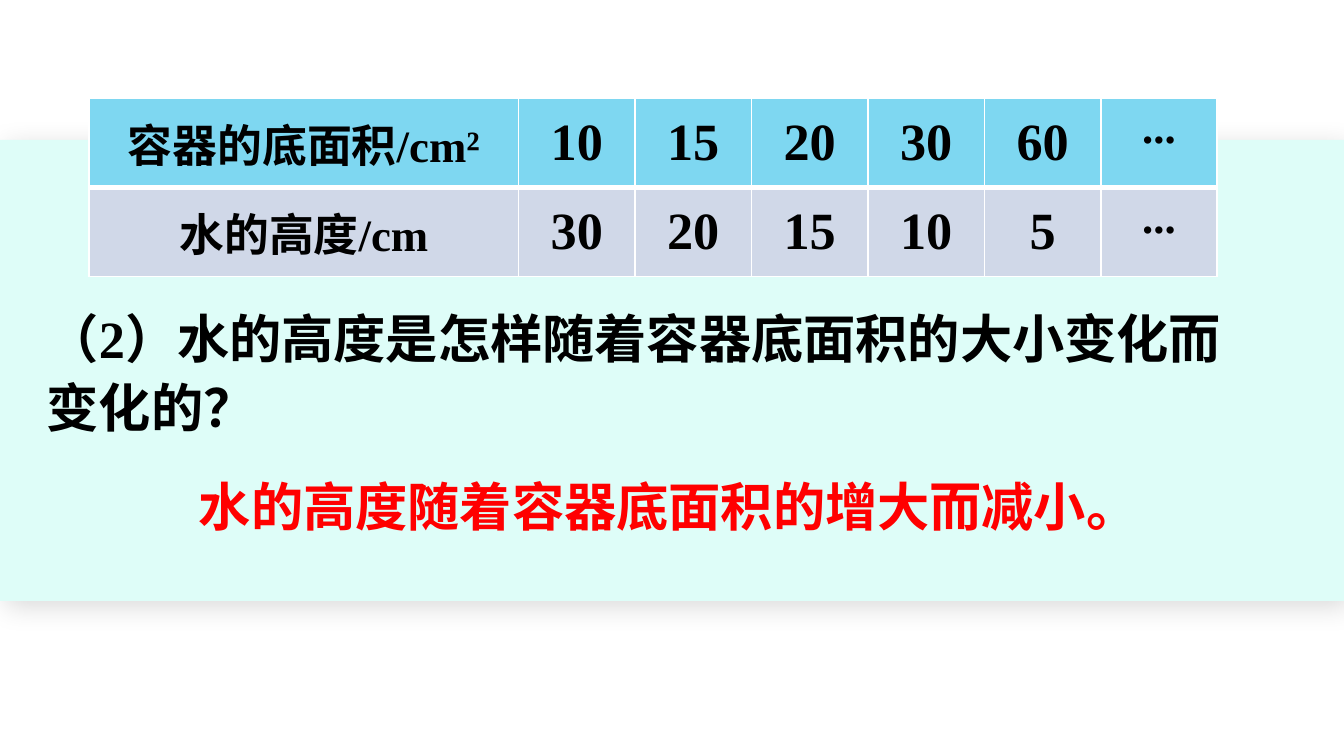
import pptx
import pptx.dml.color
import pptx.enum.shapes
import pptx.enum.text
import pptx.oxml
import pptx.oxml.ns
import pptx.util
from lxml import etree

Pt = pptx.util.Pt
RGBColor = pptx.dml.color.RGBColor
MIDDLE = pptx.enum.text.MSO_ANCHOR.MIDDLE
TOP = pptx.enum.text.MSO_ANCHOR.TOP
CENTER = pptx.enum.text.PP_ALIGN.CENTER
qn = pptx.oxml.ns.qn

BLACK = RGBColor(0, 0, 0)
WHITE = RGBColor(0xFF, 0xFF, 0xFF)
RED = RGBColor(0xFF, 0, 0)
MINT = RGBColor(0xDE, 0xFD, 0xF8)
SKY = RGBColor(0x7E, 0xD7, 0xF1)
LAVENDER = RGBColor(0xD0, 0xD8, 0xE8)

LATIN = "Times New Roman"
CHINESE = "Noto Sans CJK SC"

ROWS = [
    (("容器的底面积", "/cm²"), ["10", "15", "20", "30", "60", "..."], SKY),
    (("水的高度", "/cm"), ["30", "20", "15", "10", "5", "..."], LAVENDER),
]


class Lesson:
    def __init__(self, slide):
        self.slide = slide

    def style_run(self, run, size, latin=LATIN, color=BLACK):
        font = run.font
        font.size, font.bold, font.name = Pt(size), True, latin
        font.color.rgb = color
        east_asian = etree.SubElement(font._element, qn("a:ea"))
        east_asian.set("typeface", CHINESE)

    def band(self, left, top, width, height):
        """Draw the full-width background band with its soft shadow."""
        band = self.slide.shapes.add_shape(
            pptx.enum.shapes.MSO_SHAPE.RECTANGLE,
            Pt(left), Pt(top), Pt(width), Pt(height))
        band.fill.solid()
        band.fill.fore_color.rgb = MINT
        band.line.fill.background()
        band.shadow.inherit = False
        effects = band._element.spPr.find(qn("a:effectLst"))
        effects.append(pptx.oxml.parse_xml(
            f'<a:outerShdw {pptx.oxml.ns.nsdecls("a")} blurRad="{Pt(15)}" '
            f'dist="{Pt(5)}" dir="2700000" algn="tl" rotWithShape="0">'
            '<a:srgbClr val="000000"><a:alpha val="15000"/></a:srgbClr>'
            '</a:outerShdw>'))

    def text(self, words, left, top, width, height, latin, color=BLACK,
             anchor=TOP, spacing=1.0):
        frame = self.slide.shapes.add_textbox(
            Pt(left), Pt(top), Pt(width), Pt(height)).text_frame
        frame.word_wrap = True
        frame.auto_size = pptx.enum.text.MSO_AUTO_SIZE.SHAPE_TO_FIT_TEXT
        frame.vertical_anchor = anchor
        frame.text = words
        paragraph = frame.paragraphs[0]
        paragraph.line_spacing = spacing
        self.style_run(paragraph.runs[0], 28, latin, color)

    def cell(self, cell, pieces, fill, borders, anchor=MIDDLE):
        """Fill a cell with (words, size, latin font) pieces."""
        cell.vertical_anchor = anchor
        cell.margin_left = cell.margin_right = Pt(5.04)
        cell.margin_top = cell.margin_bottom = Pt(2.88)
        properties = cell._tc.get_or_add_tcPr()
        for side, width in borders.items():
            properties.append(pptx.oxml.parse_xml(
                f'<a:ln{side} {pptx.oxml.ns.nsdecls("a")} w="{Pt(width)}">'
                f'<a:solidFill><a:srgbClr val="{WHITE}"/></a:solidFill>'
                f'</a:ln{side}>'))
        cell.fill.solid()
        cell.fill.fore_color.rgb = fill
        paragraph = cell.text_frame.paragraphs[0]
        paragraph.alignment = CENTER
        for words, size, latin in pieces:
            run = paragraph.add_run()
            run.text = words
            self.style_run(run, size, latin)

    def table(self, rows, left, top, label_width, value_width, heights):
        count = len(rows[0][1])
        table = self.slide.shapes.add_table(
            len(rows), count + 1, Pt(left), Pt(top),
            Pt(label_width + count * value_width), Pt(sum(heights))).table
        table.columns[0].width = Pt(label_width)
        for column in range(1, count + 1):
            table.columns[column].width = Pt(value_width)
        for index, ((label, unit), values, fill) in enumerate(rows):
            table.rows[index].height = Pt(heights[index])
            borders = {"L": 1, "R": 1, "T": 3 if index else 1,
                       "B": 1 if index else 3}
            self.cell(table.cell(index, 0),
                      [(label, 24, CHINESE), (unit, 24, LATIN)], fill, borders)
            for column, value in enumerate(values, 1):
                dots = value == "..."
                self.cell(table.cell(index, column),
                          [(value, 24 if dots else 28, LATIN)], fill, borders,
                          TOP if dots else MIDDLE)


def main():
    deck = pptx.Presentation()
    deck.slide_width, deck.slide_height = Pt(720), Pt(405)
    lesson = Lesson(deck.slides.add_slide(deck.slide_layouts[6]))
    lesson.band(0, 75, 720, 247)
    lesson.text("（2）水的高度是怎样随着容器底面积的大小变化而变化的？",
                18, 156.5, 656, 82, LATIN, anchor=MIDDLE, spacing=1.1)
    lesson.text("水的高度随着容器底面积的增大而减小。",
                99.5, 250.5, 521, 41, CHINESE, RED)
    lesson.table(ROWS, 47.8, 52.6, 230, 62.4, [48, 47.6])
    deck.save("out.pptx")


if __name__ == "__main__":
    main()
